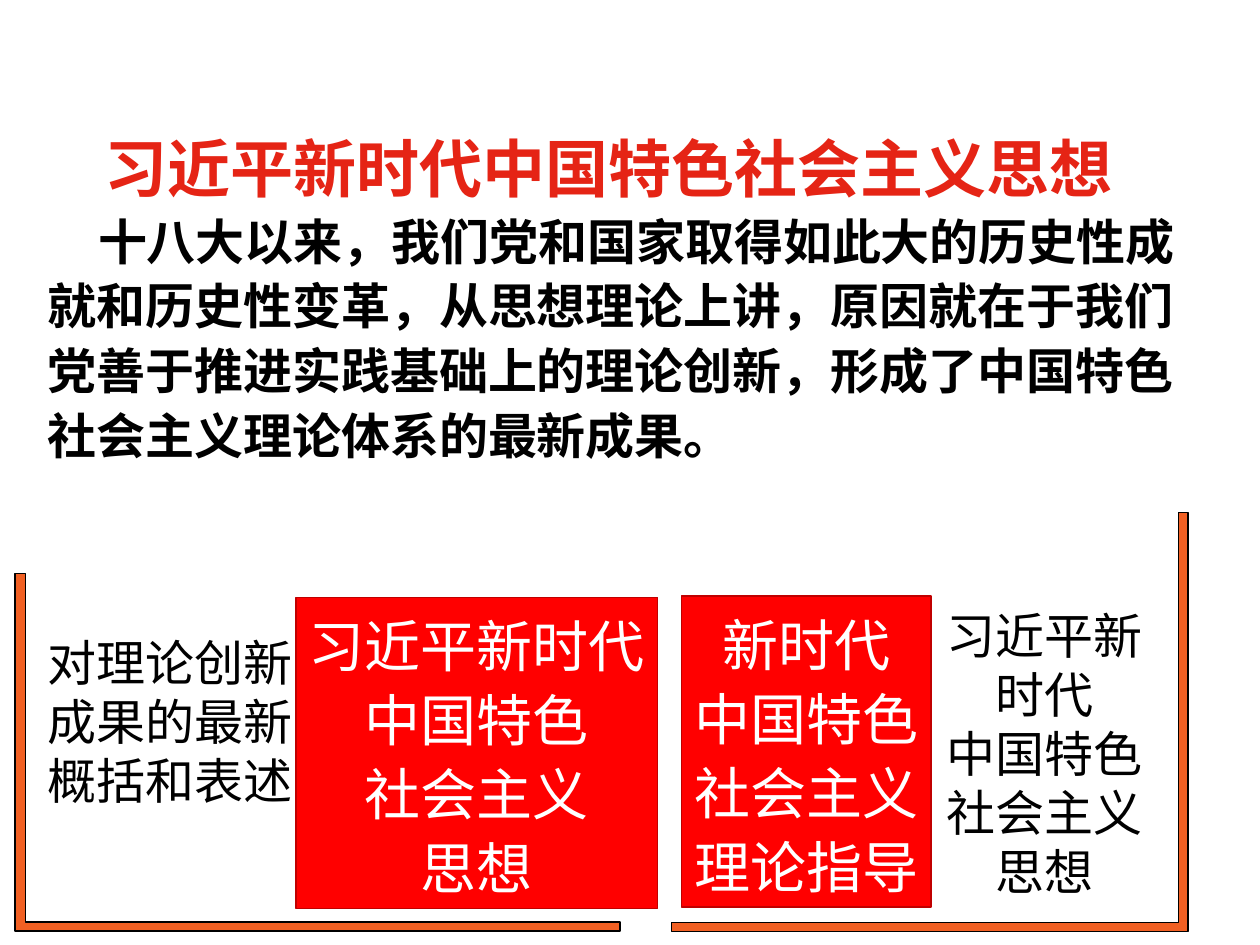
from lxml import etree
from pptx import Presentation
from pptx.dml.color import RGBColor
from pptx.enum.shapes import MSO_SHAPE
from pptx.enum.text import MSO_ANCHOR, PP_ALIGN
from pptx.oxml.ns import qn
from pptx.util import Inches, Pt

RECT, CORNER = MSO_SHAPE.RECTANGLE, MSO_SHAPE.CORNER
LEFT, CENTER = PP_ALIGN.LEFT, PP_ALIGN.CENTER
MIDDLE = MSO_ANCHOR.MIDDLE
TITLE_RED = RGBColor(0xE5, 0x24, 0x15)
BOX_RED = RGBColor(0xFF, 0x00, 0x00)
BOX_EDGE = RGBColor(0xC0, 0x00, 0x00)
ORANGE = RGBColor(0xF1, 0x60, 0x23)
BLACK = RGBColor(0x00, 0x00, 0x00)
WHITE = RGBColor(0xFF, 0xFF, 0xFF)
CJK = "Noto Sans CJK SC"


def write(p, text, size, color, font=CJK, bold=False, align=LEFT, spacing=1.0, indent=0):
    """Fill a paragraph with one run; indent is the first line's, in inches."""
    p.alignment = align
    p.line_spacing = spacing
    if indent:
        p._p.get_or_add_pPr().set("indent", str(Inches(indent)))
    r = p.add_run()
    r.text = text
    r.font.size = Pt(size)
    r.font.bold = bold
    r.font.color.rgb = color
    r.font.name = font
    etree.SubElement(r._r.get_or_add_rPr(), qn("a:ea")).set("typeface", CJK)


def add_panel(kind, box, fill, edge):
    s = slide.shapes.add_shape(kind, *map(Inches, box))
    s.shadow.inherit = False
    s.fill.solid()
    s.fill.fore_color.rgb = fill
    s.line.color.rgb = edge
    s.line.width = Pt(0.75)
    return s


prs = Presentation()
prs.slide_width, prs.slide_height = Inches(10), Inches(7.5)
slide = prs.slides.add_slide(prs.slide_layouts[6])

# Title and introduction
intro = slide.shapes.add_textbox(Inches(0.28), Inches(0.92), Inches(9.45), Inches(2.91))
tf = intro.text_frame
tf.word_wrap = True
write(tf.paragraphs[0], "习近平新时代中国特色社会主义思想", 36, TITLE_RED,
      bold=True, spacing=1.1, indent=0.45)
write(tf.add_paragraph(),
      "十八大以来，我们党和国家取得如此大的历史性成就和历史性变革，从思想理论上讲，"
      "原因就在于我们党善于推进实践基础上的理论创新，形成了中国特色社会主义理论体系的最新成果。",
      28, BLACK, bold=True, spacing=1.1, indent=0.4)

# Corner brackets
brackets = [
    ((0.12, 4.55, 4.8, 2.84), 0, (0.025, 0.029)),
    ((5.72, 3.68, 3.32, 4.1), 270, (0.023, 0.02)),
]
for box, rotation, adjustments in brackets:
    s = add_panel(CORNER, box, ORANGE, BLACK)
    s.rotation = rotation
    for i, value in enumerate(adjustments):
        s.adjustments[i] = value

# Red boxes
red_boxes = [
    ((2.35, 4.74, 2.87, 2.47), ["习近平新时代", "中国特色", "社会主义", "思想"]),
    ((5.41, 4.73, 1.98, 2.47), ["新时代", "中国特色", "社会主义", "理论指导"]),
]
for box, lines in red_boxes:
    tf = add_panel(RECT, box, BOX_RED, BOX_EDGE).text_frame
    tf.word_wrap = False
    tf.vertical_anchor = MIDDLE
    for i, line in enumerate(lines):
        p = tf.add_paragraph() if i else tf.paragraphs[0]
        write(p, line, 32, WHITE, font="Arial", align=CENTER, spacing=1.1)

# Side captions
captions = [
    ((0.28, 4.97, 2.16, 1.51), LEFT, ["对理论创新成果的最新概括和表述"]),
    ((7.39, 4.76, 1.8, 2.46), CENTER, ["习近平新时代", "中国特色", "社会主义", "思想"]),
]
for box, align, lines in captions:
    tf = slide.shapes.add_textbox(*map(Inches, box)).text_frame
    tf.word_wrap = True
    for i, line in enumerate(lines):
        p = tf.add_paragraph() if i else tf.paragraphs[0]
        write(p, line, 28, BLACK, align=align)

prs.save("out.pptx")
